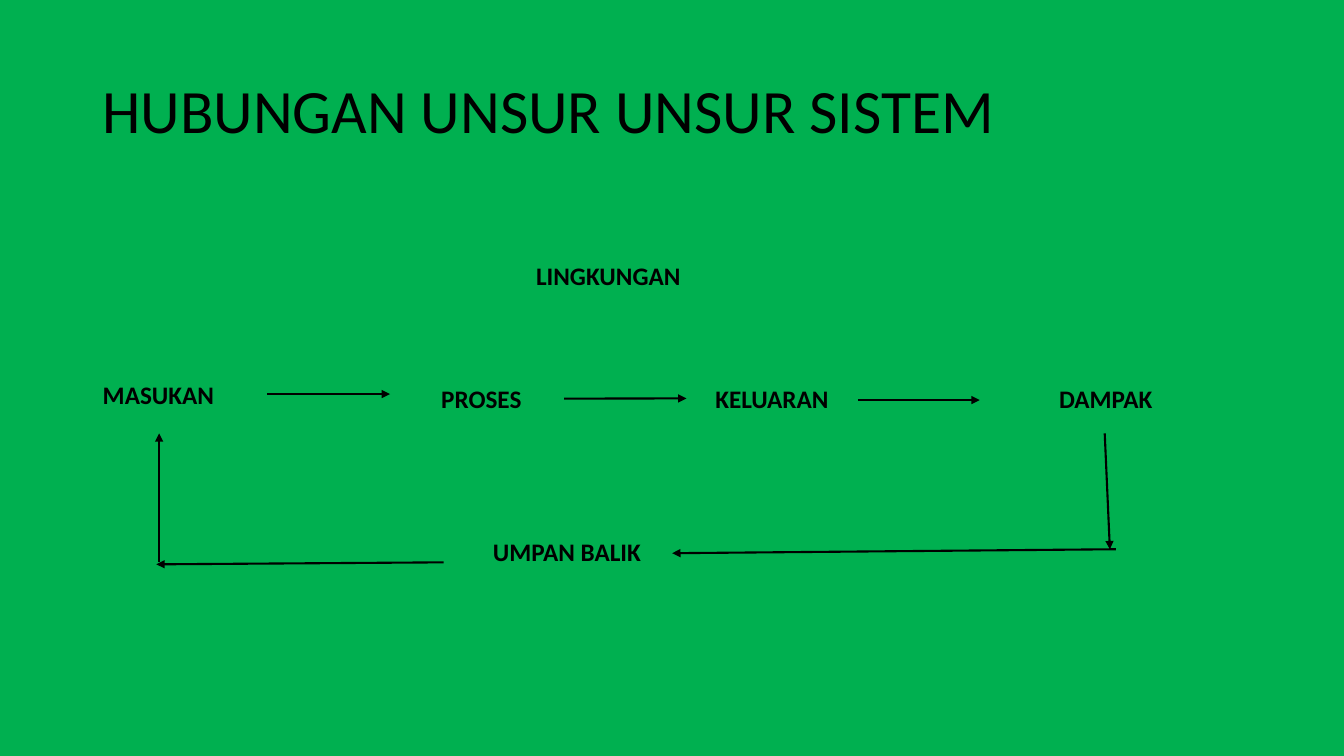
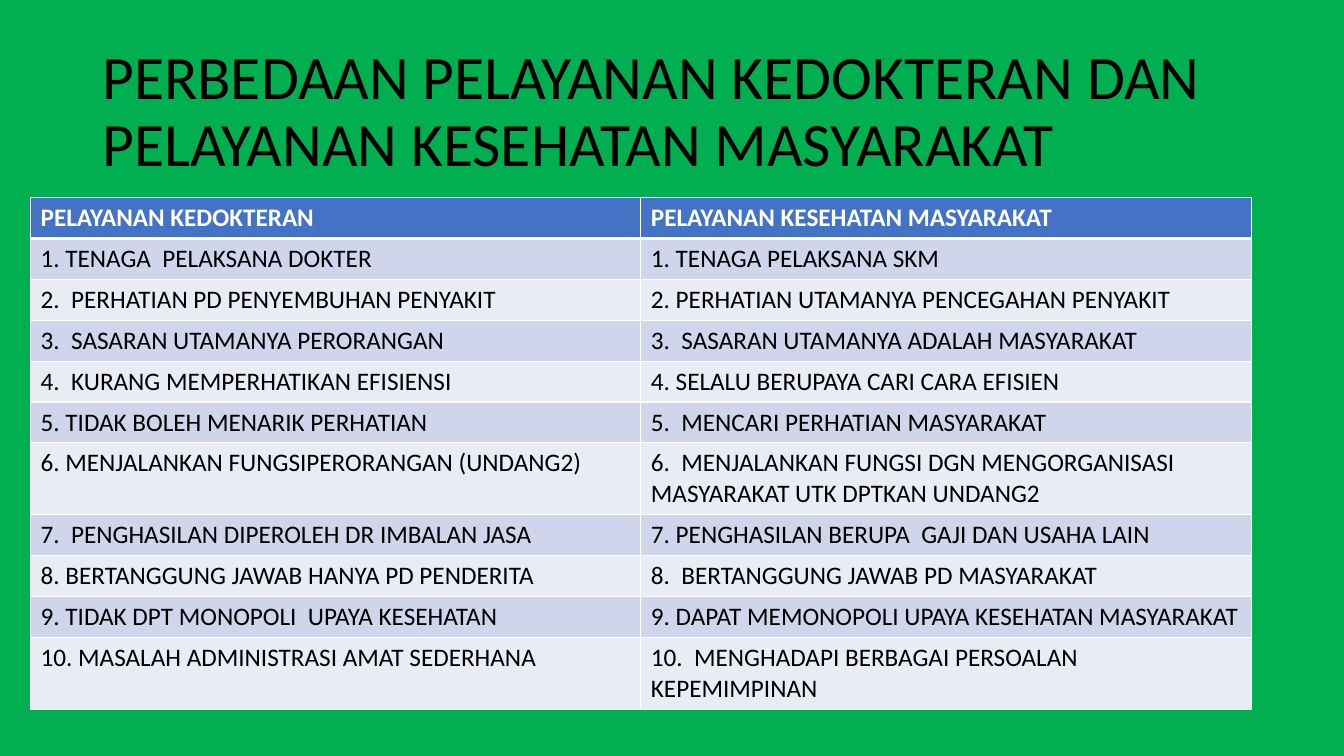
import dataclasses

import pptx
import pptx.dml.color
import pptx.enum.shapes
import pptx.enum.text
import pptx.oxml
import pptx.oxml.ns
import pptx.util

Cm = pptx.util.Cm
Pt = pptx.util.Pt
RGBColor = pptx.dml.color.RGBColor
ALIGN = pptx.enum.text.PP_ALIGN
ANCHOR = pptx.enum.text.MSO_ANCHOR

GREEN = RGBColor(0x00, 0xB0, 0x50)
BLACK = RGBColor(0x00, 0x00, 0x00)
WHITE = RGBColor(0xFF, 0xFF, 0xFF)
HEADER_BLUE = RGBColor(0x44, 0x72, 0xC4)
BANDS = (RGBColor(0xCF, 0xD5, 0xEA), RGBColor(0xE9, 0xEB, 0xF5))
FONT = "Calibri"
DRAWING = pptx.oxml.ns.nsdecls("a")


@dataclasses.dataclass
class Region:
    left: float
    top: float
    width: float
    height: float


TITLE = Region(2.33, 1.01, 29.21, 3.68)
DIAGRAM = Region(2.34, 6.43, 27.45, 7.99)
COMPARISON = Region(0.77, 4.98, 30.76, 12.89)

LABEL_HEIGHT = 1.03
LABELS = {
    "MASUKAN": (0, 3, 3.35, ALIGN.LEFT),
    "PROSES": (8.53, 3.1, 3.35, ALIGN.LEFT),
    "KELUARAN": (15.44, 3.1, 4.29, ALIGN.LEFT),
    "DAMPAK": (24.1, 3.1, 3.35, ALIGN.LEFT),
    "LINGKUNGAN": (8.53, 0, 8.92, ALIGN.CENTER),
    "UMPAN BALIK": (7.49, 6.96, 8.92, ALIGN.CENTER),
}
ARROWS = [
    ((4.39, 3.5), (7.49, 3.5), None),
    ((11.88, 3.61), (14.96, 3.61), "PROSES"),
    ((19.28, 3.65), (22.35, 3.65), None),
    ((25.5, 4.49), (25.63, 7.41), None),
    ((25.78, 7.41), (14.6, 7.51), None),
    ((8.84, 7.74), (1.6, 7.79), None),
    ((1.67, 7.74), (1.67, 4.49), None),
]

ROW_HEIGHT = 1.03
TALL_ROW_HEIGHT = 1.81
TALL_ROWS = (6, 10)
ROWS = [
    ("PELAYANAN KEDOKTERAN", "PELAYANAN KESEHATAN MASYARAKAT"),
    ("1. TENAGA  PELAKSANA DOKTER", "1. TENAGA PELAKSANA SKM"),
    ("2.  PERHATIAN PD PENYEMBUHAN PENYAKIT",
     "2. PERHATIAN UTAMANYA PENCEGAHAN PENYAKIT"),
    ("3.  SASARAN UTAMANYA PERORANGAN",
     "3.  SASARAN UTAMANYA ADALAH MASYARAKAT"),
    ("4.  KURANG MEMPERHATIKAN EFISIENSI",
     "4. SELALU BERUPAYA CARI CARA EFISIEN"),
    ("5. TIDAK BOLEH MENARIK PERHATIAN", "5.  MENCARI PERHATIAN MASYARAKAT"),
    ("6. MENJALANKAN FUNGSIPERORANGAN (UNDANG2)",
     "6.  MENJALANKAN FUNGSI DGN MENGORGANISASI  MASYARAKAT UTK DPTKAN UNDANG2"),
    ("7.  PENGHASILAN DIPEROLEH DR IMBALAN JASA",
     "7. PENGHASILAN BERUPA  GAJI DAN USAHA LAIN"),
    ("8. BERTANGGUNG JAWAB HANYA PD PENDERITA",
     "8.  BERTANGGUNG JAWAB PD MASYARAKAT"),
    ("9. TIDAK DPT MONOPOLI  UPAYA KESEHATAN",
     "9. DAPAT MEMONOPOLI UPAYA KESEHATAN MASYARAKAT"),
    ("10. MASALAH ADMINISTRASI AMAT SEDERHANA",
     "10.  MENGHADAPI BERBAGAI PERSOALAN  KEPEMIMPINAN"),
]


def write_text(frame, text, size=18, color=BLACK, bold=False,
               align=ALIGN.LEFT, spacing=1.0):
    frame.word_wrap = True
    para = frame.paragraphs[0]
    para.alignment = align
    para.line_spacing = spacing
    span = para.add_run()
    span.text = text
    span.font.name = FONT
    span.font.size = Pt(size)
    span.font.bold = bold
    span.font.color.rgb = color


def add_text_box(page, region, text, anchor=ANCHOR.TOP, **text_format):
    box = page.shapes.add_textbox(
        Cm(region.left), Cm(region.top), Cm(region.width), Cm(region.height))
    box.text_frame.vertical_anchor = anchor
    write_text(box.text_frame, text, **text_format)
    return box


def add_page(deck, title):
    page = deck.slides.add_slide(deck.slide_layouts[6])
    page.background.fill.solid()
    page.background.fill.fore_color.rgb = GREEN
    add_text_box(page, TITLE, title, anchor=ANCHOR.MIDDLE, size=44, spacing=0.9)
    return page


def add_arrow(page, region, start, end):
    points = [Cm(offset + origin) for point in (start, end)
              for offset, origin in zip(point, (region.left, region.top))]
    arrow = page.shapes.add_connector(
        pptx.enum.shapes.MSO_CONNECTOR.STRAIGHT, *points)
    arrow.line.color.rgb = BLACK
    arrow.line.width = Pt(1.5)
    arrow.line._get_or_add_ln().append(
        pptx.oxml.parse_xml(f'<a:tailEnd {DRAWING} type="triangle"/>'))
    arrow._element.spPr.append(pptx.oxml.parse_xml(f"<a:effectLst {DRAWING}/>"))
    return arrow


def add_system_diagram(page, region):
    boxes = {}
    for text, (left, top, width, align) in LABELS.items():
        place = Region(region.left + left, region.top + top, width, LABEL_HEIGHT)
        boxes[text] = add_text_box(page, place, text, bold=True, align=align)
    for start, end, source in ARROWS:
        arrow = add_arrow(page, region, start, end)
        if source:
            arrow.begin_connect(boxes[source], 3)


def set_cell_borders(cell, bottom_width):
    properties = cell._tc.get_or_add_tcPr()
    for side, width in (("L", 1), ("R", 1), ("T", 1), ("B", bottom_width)):
        properties.append(pptx.oxml.parse_xml(
            f'<a:ln{side} {DRAWING} w="{Pt(width)}"><a:solidFill>'
            f'<a:srgbClr val="{WHITE}"/></a:solidFill></a:ln{side}>'))


def add_comparison_table(page, region):
    table = page.shapes.add_table(
        len(ROWS), len(ROWS[0]), Cm(region.left), Cm(region.top),
        Cm(region.width), Cm(region.height)).table
    for row_index, texts in enumerate(ROWS):
        header = row_index == 0
        tall = row_index in TALL_ROWS
        table.rows[row_index].height = Cm(TALL_ROW_HEIGHT if tall else ROW_HEIGHT)
        for column_index, text in enumerate(texts):
            cell = table.cell(row_index, column_index)
            thick = 3 if header else 1
            set_cell_borders(cell, thick)
            cell.fill.solid()
            cell.fill.fore_color.rgb = (
                HEADER_BLUE if header else BANDS[(row_index - 1) % 2])
            write_text(cell.text_frame, text, bold=header,
                       color=WHITE if header else BLACK)


def main():
    deck = pptx.Presentation()
    deck.slide_width = Cm(33.87)
    deck.slide_height = Cm(19.05)
    add_system_diagram(add_page(deck, "HUBUNGAN UNSUR UNSUR SISTEM"), DIAGRAM)
    add_comparison_table(
        add_page(deck, "PERBEDAAN PELAYANAN KEDOKTERAN DAN "
                       "PELAYANAN KESEHATAN MASYARAKAT"), COMPARISON)
    deck.save("out.pptx")


if __name__ == "__main__":
    main()
